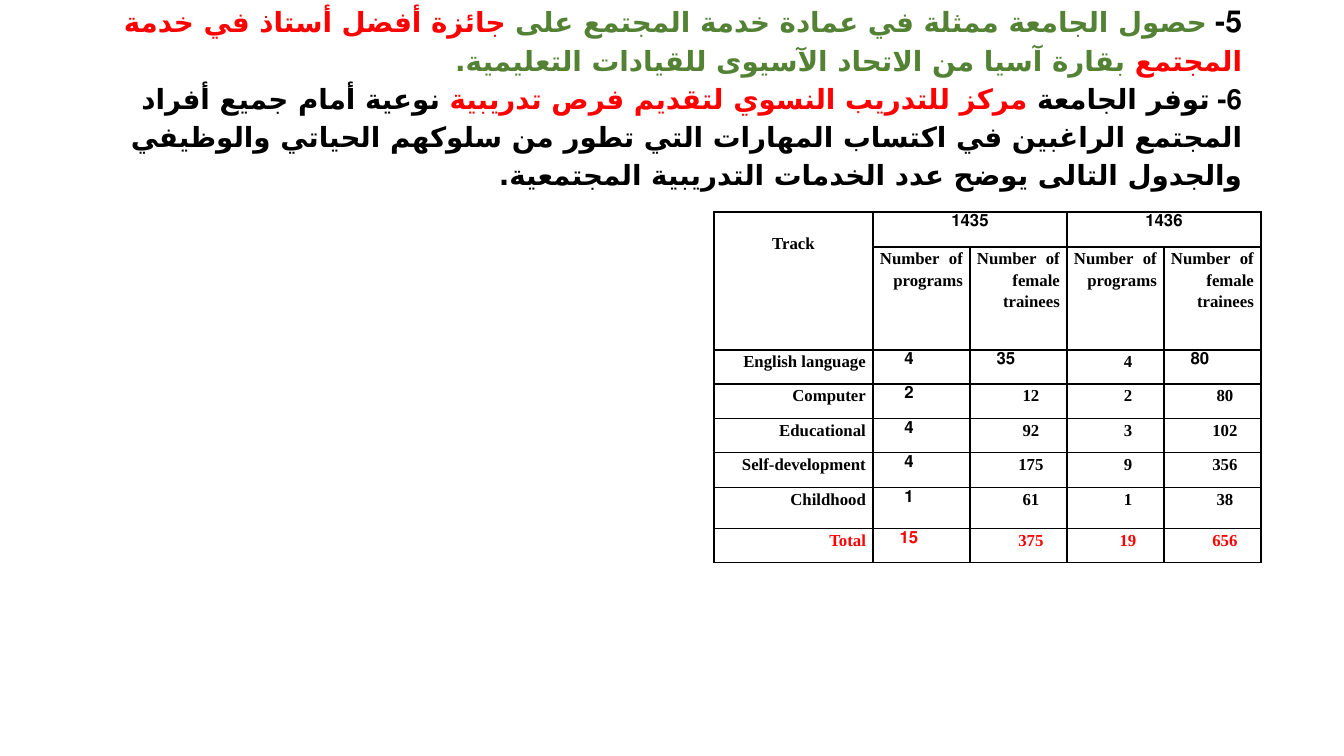
import dataclasses

import pptx
import pptx.dml.color
import pptx.enum.text
import pptx.oxml.ns
import pptx.util
import lxml.etree

PX = 914400 / 100.8
ALIGN = pptx.enum.text.PP_ALIGN


@dataclasses.dataclass(frozen=True)
class Theme:
    black: str = "000000"
    red: str = "FF0000"
    green: str = "548235"
    heading_font: str = "Calibri"
    table_font: str = "Times New Roman"
    arabic_font: str = "DejaVu Sans"
    digit_font: str = "Helvetica"
    number_size: float = 21.6
    heading_size: float = 19.8
    table_size: float = 12
    border: float = 1
    line_spacing: float = 1.15


THEME = Theme()

STATEMENTS = [
    [
        ("5- ", THEME.black, THEME.number_size, THEME.digit_font),
        ("حصول الجامعة ممثلة في عمادة خدمة المجتمع على ", THEME.green),
        ("جائزة أفضل أستاذ في خدمة المجتمع ", THEME.red),
        ("بقارة آسيا من الاتحاد الآسيوى للقيادات التعليمية.", THEME.green),
    ],
    [
        ("6- ", THEME.black, THEME.heading_size, THEME.digit_font),
        ("توفر الجامعة ", THEME.black),
        ("مركز للتدريب النسوي لتقديم فرص تدريبية ", THEME.red),
        (
            "نوعية أمام جميع أفراد المجتمع الراغبين في اكتساب المهارات التي تطور من "
            "سلوكهم الحياتي والوظيفي والجدول التالى يوضح عدد الخدمات التدريبية المجتمعية.",
            THEME.black,
        ),
    ],
]

YEARS = ["1435", "1436"]
MEASURES = ["Number of programs", "Number of female trainees"]
TRACKS = [
    ("English language", 4, 35, 4, 80),
    ("Computer", 2, 12, 2, 80),
    ("Educational", 4, 92, 3, 102),
    ("Self-development", 4, 175, 9, 356),
    ("Childhood", 1, 61, 1, 38),
    ("Total", 15, 375, 19, 656),
]
COLUMN_WIDTHS = [159] + [97] * 4
ROW_HEIGHTS = [35, 103, 34, 35, 34, 35, 41, 34]


def px(length):
    return pptx.util.Emu(round(length * PX))


def add_run(paragraph, text, font, size, color, complex_font):
    run = paragraph.add_run()
    run.text = text
    run.font.name = font
    run.font.size = pptx.util.Pt(size)
    run.font.bold = True
    run.font.color.rgb = pptx.dml.color.RGBColor.from_string(color)
    properties = run.font._element
    complex_script = lxml.etree.SubElement(properties, pptx.oxml.ns.qn("a:cs"))
    complex_script.set("typeface", complex_font)


def add_statement_run(
    paragraph, text, color, size=THEME.heading_size, complex_font=THEME.arabic_font
):
    add_run(paragraph, text, THEME.heading_font, size, color, complex_font)


def set_paragraph(paragraph, align, rtl=True, indent=0):
    paragraph.alignment = align
    paragraph.line_spacing = THEME.line_spacing
    properties = paragraph._p.get_or_add_pPr()
    properties.set("marL", str(px(indent)))
    properties.set("indent", "0")
    properties.set("rtl", str(int(rtl)))


def add_statements(slide):
    box = slide.shapes.add_textbox(px(93), px(40), px(1159), px(146))
    frame = box.text_frame
    frame.word_wrap = True
    frame.vertical_anchor = pptx.enum.text.MSO_ANCHOR.MIDDLE
    frame.margin_bottom = px(43)
    paragraph = frame.paragraphs[0]
    set_paragraph(paragraph, ALIGN.RIGHT)
    for index, statement in enumerate(STATEMENTS):
        if index:
            paragraph.add_line_break()
        for part in statement:
            add_statement_run(paragraph, *part)


def style_cell(cell):
    properties = cell._tc.get_or_add_tcPr()
    for side in ("lnL", "lnR", "lnT", "lnB"):
        line = lxml.etree.SubElement(properties, pptx.oxml.ns.qn("a:" + side))
        line.set("w", str(pptx.util.Pt(THEME.border)))
        fill = lxml.etree.SubElement(line, pptx.oxml.ns.qn("a:solidFill"))
        color = lxml.etree.SubElement(fill, pptx.oxml.ns.qn("a:srgbClr"))
        color.set("val", THEME.black)
    cell.fill.background()
    cell.margin_left = cell.margin_right = px(7)
    cell.margin_top = cell.margin_bottom = 0


def write_cell(cell, text, align, color=THEME.black, rtl=True, indent=0):
    paragraph = cell.text_frame.paragraphs[0]
    set_paragraph(paragraph, align, rtl, indent)
    add_run(paragraph, text, THEME.table_font, THEME.table_size, color, THEME.digit_font)


def write_headers(table):
    track_header = table.cell(0, 0)
    track_header.merge(table.cell(1, 0))
    track_header.margin_top = px(20)
    write_cell(track_header, "Track", ALIGN.CENTER)
    for year_index, year in enumerate(YEARS):
        first = 1 + year_index * len(MEASURES)
        year_header = table.cell(0, first)
        year_header.merge(table.cell(0, first + len(MEASURES) - 1))
        write_cell(year_header, year, ALIGN.CENTER)
        for offset, measure in enumerate(MEASURES):
            write_cell(table.cell(1, first + offset), measure, ALIGN.JUSTIFY)


def write_tracks(table):
    for row, (track, *counts) in enumerate(TRACKS, start=2):
        color = THEME.red if track == "Total" else THEME.black
        write_cell(table.cell(row, 0), track, ALIGN.JUSTIFY, color)
        for column, count in enumerate(counts, start=1):
            rtl = column == 1 or (row == 2 and column in (2, 4))
            write_cell(table.cell(row, column), str(count), ALIGN.CENTER, color, rtl, 25)


def add_training_table(slide):
    table = slide.shapes.add_table(
        len(ROW_HEIGHTS), len(COLUMN_WIDTHS),
        px(714), px(212), px(sum(COLUMN_WIDTHS)), px(sum(ROW_HEIGHTS)),
    ).table
    table.first_row = False
    table.horz_banding = False
    for column, width in zip(table.columns, COLUMN_WIDTHS):
        column.width = px(width)
    for row, height in zip(table.rows, ROW_HEIGHTS):
        row.height = px(height)
    for cell in table.iter_cells():
        style_cell(cell)
    write_headers(table)
    write_tracks(table)


def main():
    presentation = pptx.Presentation()
    presentation.slide_width = px(1344)
    presentation.slide_height = px(756)
    slide = presentation.slides.add_slide(presentation.slide_layouts[6])
    add_statements(slide)
    add_training_table(slide)
    presentation.save("out.pptx")


if __name__ == "__main__":
    main()
